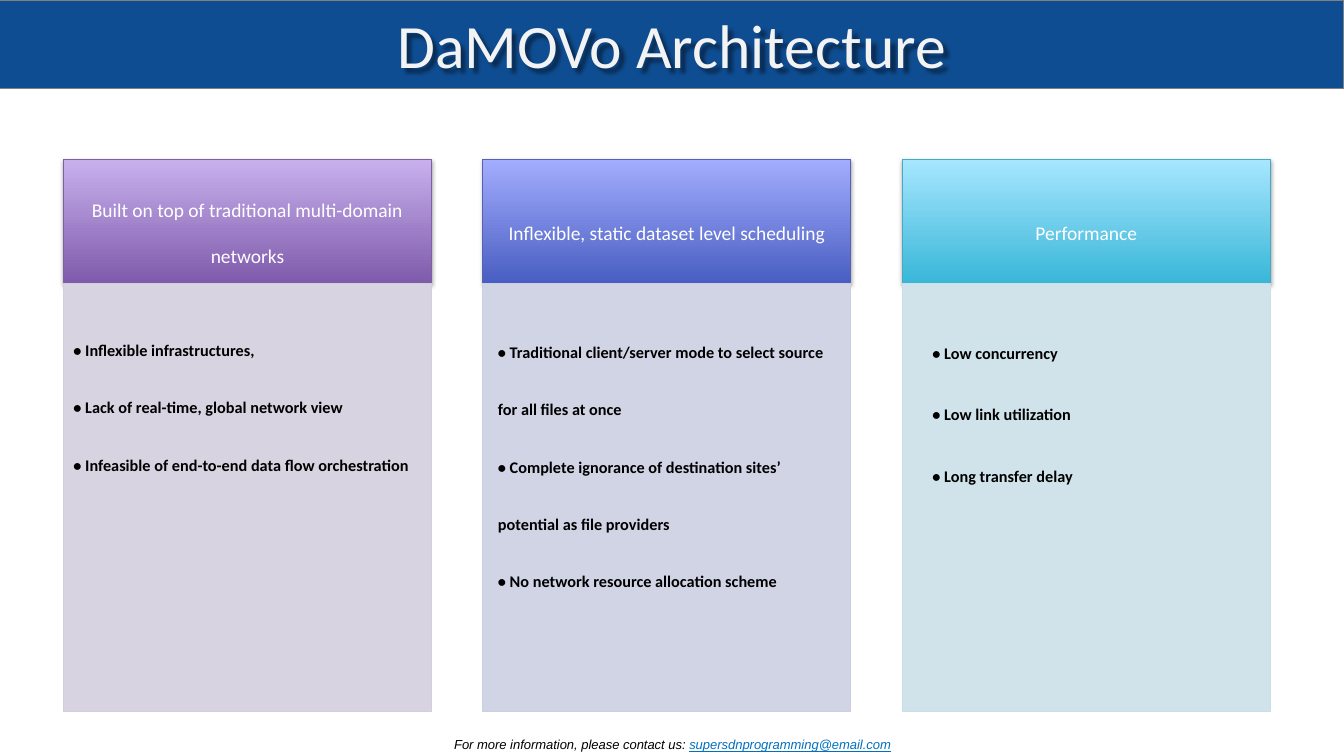
from lxml import etree
from pptx import Presentation
from pptx import util as u
from pptx.dml.color import RGBColor
from pptx.enum import shapes, text
from pptx.oxml import ns

Inches, Pt = u.Inches, u.Pt
SUBSCRIPT = "-25000"
COLUMN_LEFT, COLUMN_STEP, COLUMN_WIDTH = 0.63, 4.16, 3.65
HEADER_TOP, HEADER_HEIGHT, PANEL_HEIGHT = 1.58, 1.23, 4.25

# heading, (gradient bottom, gradient top, outline), (panel fill, panel outline)
COLUMNS = [
    ("Built on top of traditional multi-domain networks",
     ("7F5BAB", "C8B0ED", "7D60A0"), ("D8D3E0", "D3CEDB")),
    ("Inflexible, static dataset level scheduling",
     ("495EC2", "A3ADFE", "5363B2"), ("D1D4E5", "CCCFE0")),
    ("Performance",
     ("39B7D8", "A7E6FF", "46AAC5"), ("D0E3EA", "CBDEE5")),
]

# box, points, space after in points, paragraph level
BULLETS = [
    ((0.63, 2.95, 3.65, 2.63),
     ["Inflexible infrastructures,",
      "Lack of real-time, global network view",
      "Infeasible of end-to-end data flow orchestration"], 0, 0),
    ((4.84, 2.97, 3.65, 4.09),
     ["Traditional client/server mode to select source for all files at once",
      "Complete ignorance of destination sites’ potential as file providers",
      "No network resource allocation scheme"], 0, 0),
    ((9.15, 2.98, 3.25, 1.66),
     ["Low concurrency", "Low link utilization", "Long transfer delay"], 3, 1),
]


def color(value):
    return RGBColor.from_string(value)


def add_child(parent, tag, **attributes):
    child = etree.SubElement(parent, ns.qn(tag))
    for name, value in attributes.items():
        child.set(name, str(value))
    return child


def add_shadow(shape, blur, distance, angle, opacity):
    """Give the shape a black outer shadow."""
    shape.shadow.inherit = False
    effects = shape._element.spPr.find(ns.qn("a:effectLst"))
    shadow = add_child(effects, "a:outerShdw", blurRad=Pt(blur), dist=Pt(distance),
                       dir=angle * 60000, rotWithShape=0)
    black = add_child(shadow, "a:srgbClr", val="000000")
    add_child(black, "a:alpha", val=opacity * 1000)


def add_run(paragraph, words, size, font, fill, baseline=SUBSCRIPT, **styles):
    run = paragraph.add_run()
    run.text = words
    run.font.size = Pt(size)
    run.font.name = font
    run.font.color.rgb = color(fill)
    for name, value in styles.items():
        setattr(run.font, name, value)
    if baseline:
        run.font._element.set("baseline", baseline)


def add_rectangle(slide, box, outline):
    shape = slide.shapes.add_shape(shapes.MSO_SHAPE.RECTANGLE, *map(Inches, box))
    shape.shadow.inherit = False
    shape.line.color.rgb = color(outline)
    shape.line.width = Pt(0.75)
    return shape


def add_text_box(slide, box):
    frame = slide.shapes.add_textbox(*map(Inches, box)).text_frame
    frame.word_wrap = True
    frame.auto_size = text.MSO_AUTO_SIZE.SHAPE_TO_FIT_TEXT
    return frame


def add_title(slide, words):
    box = (0, 0, 13.33, 0.88)
    bar = add_rectangle(slide, box, "808080")
    bar.fill.solid()
    bar.fill.fore_color.rgb = color("0F4D92")
    title = slide.shapes.title
    bar._element.addnext(title._element)
    title.left, title.top, title.width, title.height = map(Inches, box)
    title.fill.background()
    add_shadow(title, 3, 3, 45, 45)
    frame = title.text_frame
    frame.auto_size = text.MSO_AUTO_SIZE.NONE
    frame.vertical_anchor = text.MSO_ANCHOR.MIDDLE
    paragraph = frame.paragraphs[0]
    paragraph.alignment = text.PP_ALIGN.CENTER
    add_run(paragraph, words, 44, "Calibri", "F3F3F3", baseline=None)


def add_header(slide, left, words, bottom, top, outline):
    header = add_rectangle(slide, (left, HEADER_TOP, COLUMN_WIDTH, HEADER_HEIGHT), outline)
    header.fill.gradient()
    header.fill.gradient_angle = 90
    for stop, shade in zip(header.fill.gradient_stops, (bottom, top)):
        stop.color.rgb = color(shade)
    add_shadow(header, 3.1, 1.8, 90, 35)
    frame = header.text_frame
    frame.word_wrap = True
    frame.vertical_anchor = text.MSO_ANCHOR.MIDDLE
    frame.margin_left = frame.margin_right = Inches(0.22)
    frame.margin_top = frame.margin_bottom = Inches(0.12)
    paragraph = frame.paragraphs[0]
    paragraph.alignment = text.PP_ALIGN.CENTER
    add_run(paragraph, words, 24, "Calibri", "FFFFFF")


def add_panel(slide, left, fill, outline):
    top = HEADER_TOP + HEADER_HEIGHT
    panel = add_rectangle(slide, (left, top, COLUMN_WIDTH, PANEL_HEIGHT), outline)
    panel.fill.solid()
    panel.fill.fore_color.rgb = color(fill)


def add_bullets(slide, box, points, space_after, level):
    frame = add_text_box(slide, box)
    for index, point in enumerate(points):
        paragraph = frame.add_paragraph() if index else frame.paragraphs[0]
        paragraph.level = level
        paragraph.line_spacing = 1.5
        paragraph.space_after = Pt(space_after)
        paragraph._p.get_or_add_pPr().set("marL", "0")
        add_run(paragraph, "• " + point, 20, "Calibri", "000000", bold=True)


def add_contact(slide):
    paragraph = add_text_box(slide, (1.1, 7.11, 11.14, 0.37)).paragraphs[0]
    paragraph.alignment = text.PP_ALIGN.CENTER
    add_run(paragraph, "For more information, please contact us: ",
            16, "Arial", "000000", italic=True)
    add_run(paragraph, "supersdnprogramming@email.com",
            16, "Arial", "0070C0", italic=True, underline=True)


def main():
    presentation = Presentation()
    presentation.slide_width = Inches(13.33)
    presentation.slide_height = Inches(7.5)
    slide = presentation.slides.add_slide(presentation.slide_layouts[5])
    add_title(slide, "DaMOVo Architecture")
    for index, (heading, header_colors, panel_colors) in enumerate(COLUMNS):
        left = COLUMN_LEFT + index * COLUMN_STEP
        add_header(slide, left, heading, *header_colors)
        add_panel(slide, left, *panel_colors)
    for bullets in BULLETS:
        add_bullets(slide, *bullets)
    add_contact(slide)
    presentation.save("out.pptx")


if __name__ == "__main__":
    main()
